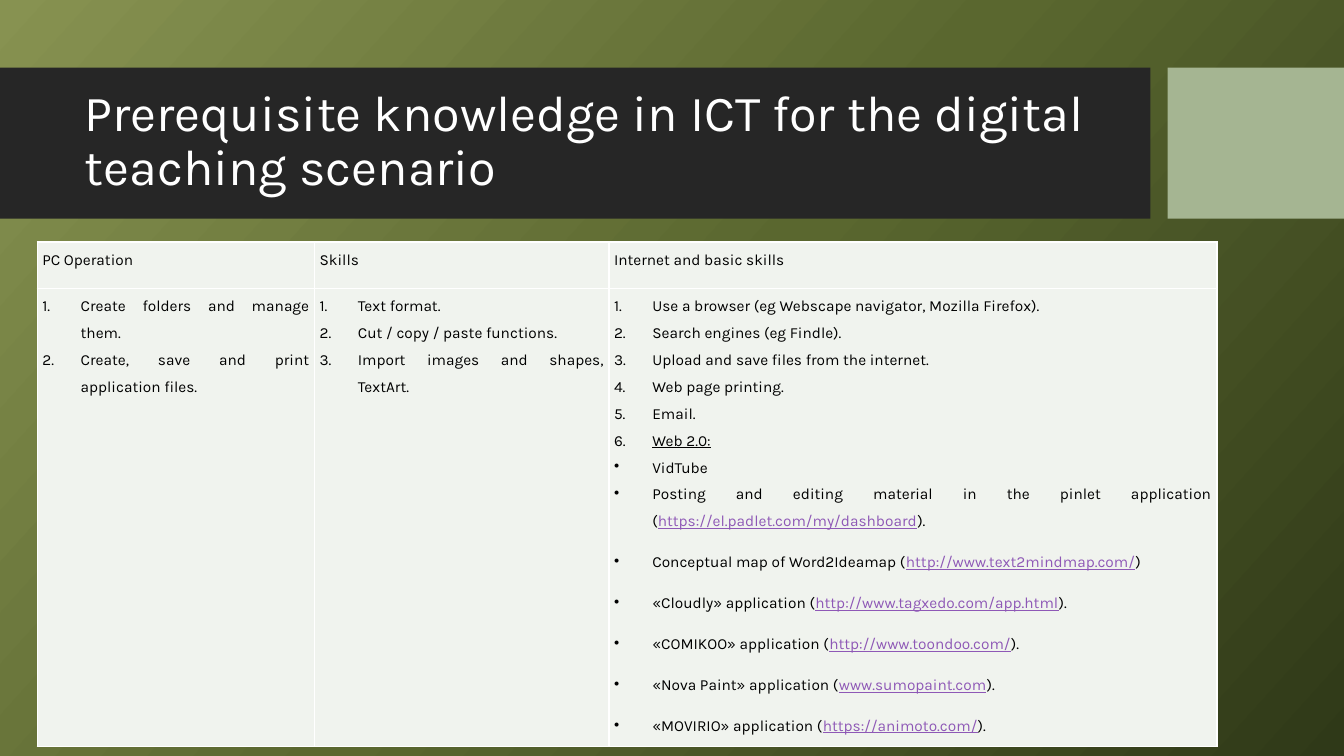
from dataclasses import dataclass

from lxml import etree
from pptx import Presentation
from pptx.dml.color import RGBColor
from pptx.enum import shapes, text
from pptx.oxml import ns
from pptx.util import Inches, Pt


@dataclass(frozen=True)
class Theme:
    font: str = "Karla"
    title_size: int = 36
    table_size: int = 11
    gradient: tuple = ((0, "879251"), (50, "5A672F"), (100, "2F3918"))
    gradient_angle: int = 318
    band: str = "262626"
    accent: str = "A5B592"
    title: str = "FFFFFF"
    cell: str = "F0F3EE"
    border: str = "FFFFFF"
    body: str = "000000"
    link: str = "8E58B6"


THEME = Theme()
NUMBER, BULLET = "number", "bullet"
INDENT = 0.38
COLUMN_WIDTHS = (2.75, 2.92, 6.03)
ROW_HEIGHTS = (0.46, 4.43)

TITLE = "Prerequisite knowledge in ICT for the digital teaching scenario"
HEADINGS = ("PC Operation", "Skills", "Internet and basic skills")
NUMBERED_ITEMS = (
    ("Create folders and manage them.", "Create, save and print application files."),
    ("Text format.", "Cut / copy / paste functions.", "Import images and shapes, TextArt."),
    ("Use a browser (eg Webscape navigator, Mozilla Firefox).", "Search engines (eg Findle).",
     "Upload and save files from the internet.", "Web page printing.", "Email."),
)
WEB_HEADING = "Web 2.0:"
VIDEO_SITE = "VidTube"
WEB_TOOLS = (
    ("Posting and editing material in the pinlet application (",
     "https://el.padlet.com/my/dashboard", ")."),
    ("Conceptual map of Word2Ideamap (", "http://www.text2mindmap.com/", ")"),
    ("«Cloudly» application (", "http://www.tagxedo.com/app.html", ")."),
    ("«COMIKOO» application (", "http://www.toondoo.com/", ")."),
    ("«Nova Paint» application (", "www.sumopaint.com", ")."),
    ("«MOVIRIO» application (", "https://animoto.com/", ")."),
)


def rgb(value):
    return RGBColor.from_string(value)


def style_font(font, size, color):
    font.name = THEME.font
    font.size = Pt(size)
    font.color.rgb = rgb(color)


def paint_background(slide):
    fill = slide.background.fill
    fill.gradient()
    fill.gradient_angle = THEME.gradient_angle
    stops = slide.element.find(".//" + ns.qn("a:gsLst"))
    for stop in list(stops):
        stops.remove(stop)
    for percent, color in THEME.gradient:
        stop = etree.SubElement(stops, ns.qn("a:gs"), pos=str(percent * 1000))
        etree.SubElement(stop, ns.qn("a:srgbClr"), val=color)


def add_block(slide, left, top, width, height, color):
    block = slide.shapes.add_shape(
        shapes.MSO_SHAPE.RECTANGLE, Inches(left), Inches(top), Inches(width), Inches(height))
    block.shadow.inherit = False
    block.fill.solid()
    block.fill.fore_color.rgb = rgb(color)
    block.line.fill.background()


def add_title_band(slide, top, height):
    add_block(slide, 0, top, 11.41, height, THEME.band)
    add_block(slide, 11.58, top, 1.75, height, THEME.accent)
    title = slide.shapes.add_textbox(
        Inches(0.74), Inches(top + 0.15), Inches(10.51), Inches(1.18))
    frame = title.text_frame
    frame.word_wrap = True
    frame.vertical_anchor = text.MSO_ANCHOR.MIDDLE
    paragraph = frame.paragraphs[0]
    paragraph.text = TITLE
    paragraph.line_spacing = 0.9
    style_font(paragraph.font, THEME.title_size, THEME.title)


def add_marker(paragraph, marker):
    """Give the paragraph a hanging indent with a number or a bullet."""
    properties = paragraph._p.get_or_add_pPr()
    properties.set("marL", str(Inches(INDENT)))
    properties.set("indent", str(-Inches(INDENT)))
    if marker == NUMBER:
        etree.SubElement(properties, ns.qn("a:buAutoNum"), type="arabicPeriod")
    else:
        etree.SubElement(properties, ns.qn("a:buChar"), char="•")


def write_paragraph(paragraph, parts, marker=None, space_after=0, underline=False):
    """Write the parts as runs; the second part, if any, is a web address."""
    if marker:
        add_marker(paragraph, marker)
    paragraph.alignment = text.PP_ALIGN.JUSTIFY
    paragraph.line_spacing = 1.5
    paragraph.space_after = Pt(space_after)
    style_font(paragraph.font, THEME.table_size, THEME.body)
    if underline:
        paragraph.font.underline = True
    for index, part in enumerate(parts):
        run = paragraph.add_run()
        run.text = part
        if index == 1:
            run.font.color.rgb = rgb(THEME.link)
            run.font.underline = True


def style_cell(cell):
    cell.margin_left = cell.margin_right = Inches(0.05)
    cell.margin_top = cell.margin_bottom = 0
    properties = cell._tc.get_or_add_tcPr()
    for side in ("lnL", "lnR", "lnT", "lnB"):
        line = etree.SubElement(properties, ns.qn("a:" + side), w=str(Pt(1)))
        fill = etree.SubElement(line, ns.qn("a:solidFill"))
        etree.SubElement(fill, ns.qn("a:srgbClr"), val=THEME.border)
    cell.fill.solid()
    cell.fill.fore_color.rgb = rgb(THEME.cell)


def column_items(column):
    """List the paragraphs of a column's body as write_paragraph arguments."""
    items = [dict(parts=(item,), marker=NUMBER) for item in NUMBERED_ITEMS[column]]
    if column == len(HEADINGS) - 1:
        items.append(dict(parts=(WEB_HEADING,), marker=NUMBER, underline=True))
        items.append(dict(parts=(VIDEO_SITE,), marker=BULLET))
        items += [dict(parts=tool, marker=BULLET, space_after=10) for tool in WEB_TOOLS]
    return items


def add_skills_table(slide, left, top):
    table = slide.shapes.add_table(
        len(ROW_HEIGHTS), len(COLUMN_WIDTHS), Inches(left), Inches(top),
        Inches(sum(COLUMN_WIDTHS)), Inches(sum(ROW_HEIGHTS))).table
    table.first_row = table.horz_banding = False
    for row, height in zip(table.rows, ROW_HEIGHTS):
        row.height = Inches(height)
    for index, width in enumerate(COLUMN_WIDTHS):
        table.columns[index].width = Inches(width)
        heading, body = table.cell(0, index), table.cell(1, index)
        style_cell(heading)
        style_cell(body)
        write_paragraph(heading.text_frame.paragraphs[0], (HEADINGS[index],), space_after=10)
        frame = body.text_frame
        for position, item in enumerate(column_items(index)):
            paragraph = frame.add_paragraph() if position else frame.paragraphs[0]
            write_paragraph(paragraph, **item)


def main():
    presentation = Presentation()
    presentation.slide_width = Inches(13.33)
    presentation.slide_height = Inches(7.5)
    slide = presentation.slides.add_slide(presentation.slide_layouts[6])
    paint_background(slide)
    add_title_band(slide, 0.67, 1.5)
    add_skills_table(slide, 0.37, 2.4)
    presentation.save("out.pptx")


if __name__ == "__main__":
    main()
